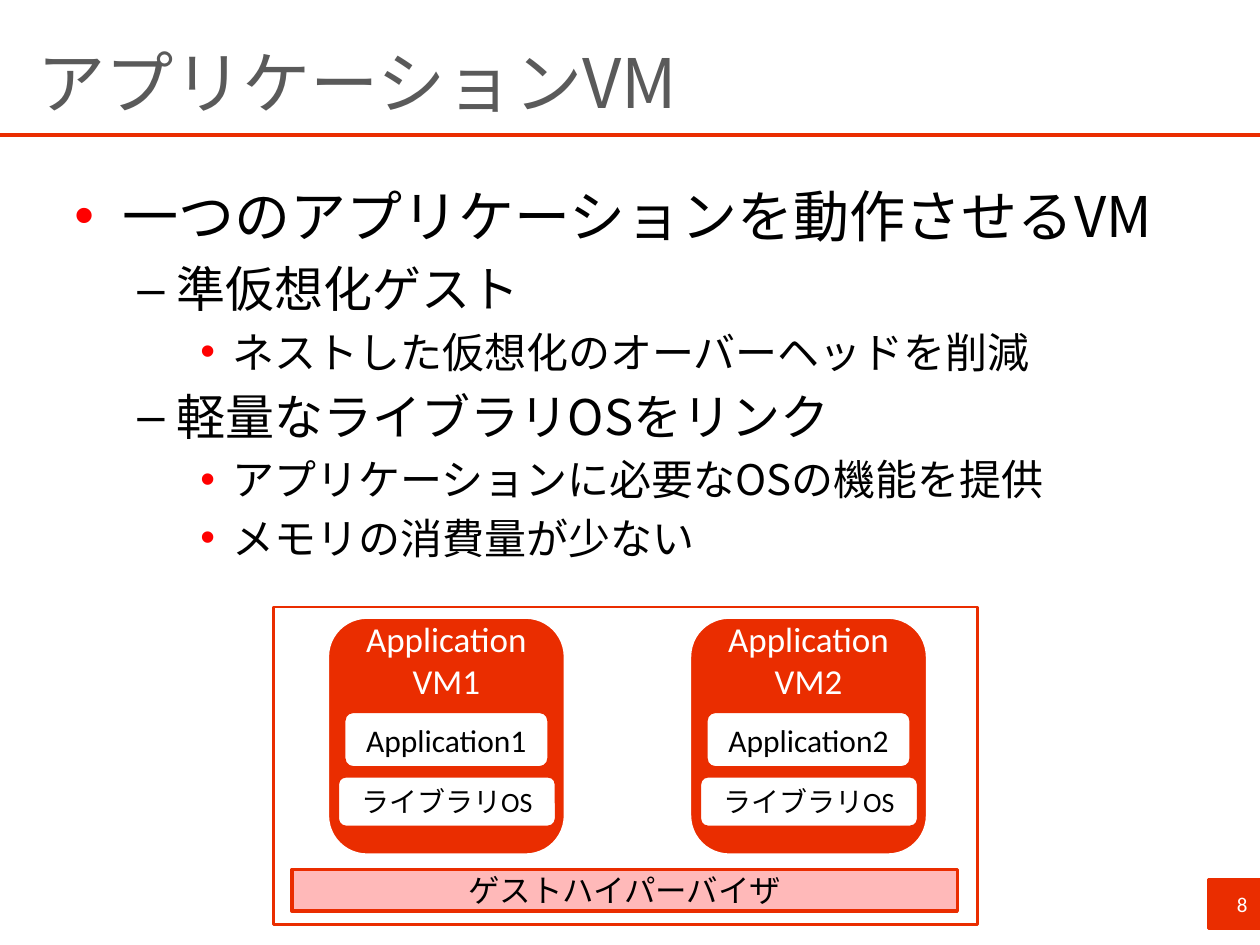
from dataclasses import dataclass

from lxml.etree import SubElement
from pptx import Presentation
from pptx.dml.color import RGBColor
from pptx.enum.shapes import MSO_CONNECTOR, MSO_SHAPE
from pptx.enum.text import MSO_ANCHOR as ANCHOR, PP_ALIGN as ALIGN
from pptx.oxml.ns import qn
from pptx.util import Cm, Pt


@dataclass(frozen=True)
class Theme:
    accent: str = "EA2D00"
    bullet: str = "FF0000"
    pink: str = "FFB9B9"
    grey: str = "5A5A5A"
    black: str = "000000"
    white: str = "FFFFFF"
    latin: str = "Calibri"
    japanese: str = "Noto Sans CJK JP"
    title: int = 39
    body: tuple = (32, 28, 24)
    vm: int = 20
    label: int = 18
    library: int = 16
    number: int = 12


THEME = Theme()

# Per level: bullet, bullet colour, text indent and hanging indent in cm
LEVELS = (
    ("•", THEME.bullet, 0.97, 0.97),
    ("–", THEME.black, 2.06, 0.79),
    ("•", THEME.bullet, 3.18, 0.64),
)

BODY = (
    (0, "一つのアプリケーションを動作させるVM"),
    (1, "準仮想化ゲスト"),
    (2, "ネストした仮想化のオーバーヘッドを削減"),
    (1, "軽量なライブラリOSをリンク"),
    (2, "アプリケーションに必要なOSの機能を提供"),
    (2, "メモリの消費量が少ない"),
)


def rgb(color):
    return RGBColor.from_string(color)


def format_paragraph(p, size, color, font, align=None):
    p.alignment = align
    for r in p.runs:
        r.font.size = Pt(size)
        r.font.name = font
        r.font.color.rgb = rgb(color)
        SubElement(r.font._element, qn("a:ea"), typeface=THEME.japanese)


def add_bullet(p, level):
    char, color, indent, hanging = LEVELS[level]
    p.level = level
    pPr = p._p.get_or_add_pPr()
    pPr.set("marL", str(Cm(indent)))
    pPr.set("indent", str(-Cm(hanging)))
    SubElement(SubElement(pPr, qn("a:buClr")), qn("a:srgbClr"), val=color)
    SubElement(pPr, qn("a:buFont"), typeface="Arial")
    SubElement(pPr, qn("a:buChar"), char=char)


def add_text_box(shapes, box):
    tf = shapes.add_textbox(*map(Cm, box)).text_frame
    tf.word_wrap = True
    return tf


def add_title(shapes, text):
    tf = add_text_box(shapes, (0.51, 0.53, 23.6, 2.21))
    tf.vertical_anchor = ANCHOR.MIDDLE
    tf.text = text
    format_paragraph(tf.paragraphs[0], THEME.title, THEME.grey, THEME.japanese)


def add_body(shapes):
    tf = add_text_box(shapes, (1.25, 3.54, 22.86, 12.57))
    tf.text = "\n".join(text for _, text in BODY)
    for i, (p, (level, _)) in enumerate(zip(tf.paragraphs, BODY)):
        size = THEME.body[level]
        p.space_before = Pt(size * 0.2 if i else 0)
        add_bullet(p, level)
        format_paragraph(p, size, THEME.black, THEME.japanese)


def add_rule(shapes, y):
    line = shapes.add_connector(MSO_CONNECTOR.STRAIGHT, 0, Cm(y), Cm(25.4), Cm(y))
    line.line.color.rgb = rgb(THEME.accent)
    line.line.width = Pt(2.25)
    SubElement(line._element.spPr, qn("a:effectLst"))


def add_box(shapes, box, fill=None, line=THEME.accent, width=2, text="",
            size=THEME.label, color=THEME.black, align=ALIGN.CENTER,
            kind=MSO_SHAPE.RECTANGLE):
    sp = shapes.add_shape(kind, *map(Cm, box))
    sp.shadow.inherit = False
    if fill:
        sp.fill.solid()
        sp.fill.fore_color.rgb = rgb(fill)
    else:
        sp.fill.background()
    sp.line.color.rgb = rgb(line)
    sp.line.width = Pt(width)
    if text:
        tf = sp.text_frame
        tf.word_wrap = True
        tf.vertical_anchor = ANCHOR.MIDDLE
        tf.text = text
        for p in tf.paragraphs:
            format_paragraph(p, size, color, THEME.latin, align)
    return sp


def add_vm(shapes, number, x, y):
    """Group a VM with the application and the library OS inside it."""
    group = shapes.add_group_shape().shapes
    rounded = MSO_SHAPE.ROUNDED_RECTANGLE
    vm = add_box(group, (x, y, 4.8, 4.8), THEME.accent, THEME.white,
                 text=f"Application\nVM{number}", size=THEME.vm,
                 color=THEME.white, kind=rounded)
    # Keep the heading above the inner boxes
    vm.text_frame.margin_top = 0
    vm.text_frame.margin_bottom = Cm(3.07)
    add_box(group, (x + 0.2, y + 3.2, 4.42, 1.04), THEME.white,
            text="ライブラリOS", size=THEME.library, kind=rounded)
    add_box(group, (x + 0.33, y + 1.9, 4.14, 1.14), THEME.white,
            text=f"Application{number}", kind=rounded)


def main():
    prs = Presentation()
    prs.slide_width, prs.slide_height = Cm(25.4), Cm(19.05)
    shapes = prs.slides.add_slide(prs.slide_layouts[6]).shapes

    add_rule(shapes, 2.72)
    add_box(shapes, (24.36, 17.73, 1.04, 0.99), THEME.accent, text="8",
            size=THEME.number, color=THEME.white, align=ALIGN.RIGHT)
    add_title(shapes, "アプリケーションVM")
    add_body(shapes)

    add_box(shapes, (5.51, 12.24, 14.2, 6.4), width=1.5)
    add_box(shapes, (5.89, 17.53, 13.41, 0.84), THEME.pink,
            text="ゲストハイパーバイザ")
    for i in range(2):
        add_vm(shapes, i + 1, 6.6 + 7.3 * i, 12.44)

    prs.save("out.pptx")


if __name__ == "__main__":
    main()
